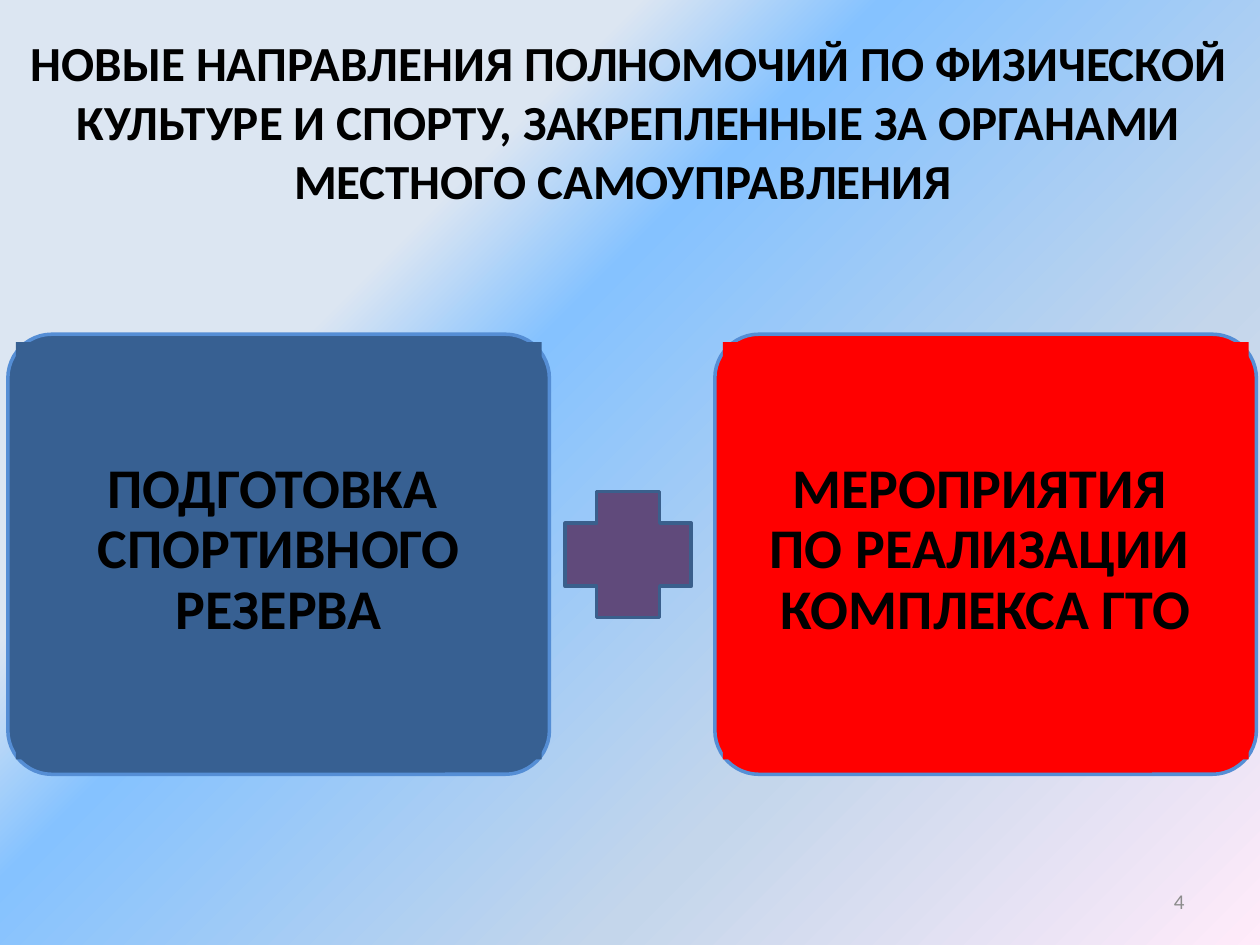
from dataclasses import dataclass

from lxml.etree import SubElement
from pptx import Presentation
from pptx.dml.color import RGBColor
from pptx.enum.shapes import MSO_SHAPE as Shape
from pptx.enum.text import MSO_ANCHOR as Anchor, MSO_AUTO_SIZE as AutoSize, PP_ALIGN as Align
from pptx.oxml.ns import qn
from pptx.util import Pt


@dataclass(frozen=True)
class Theme:
    font: str = "Calibri"
    title_size: int = 28
    card_size: int = 32
    number_size: int = 12
    text: str = "000000"
    number: str = "8C8C8C"
    blue: str = "376092"
    red: str = "FF0000"
    card_line: str = "558ED5"
    plus: str = "604A7B"
    plus_line: str = "3A5F8C"
    line_width: int = 2
    background: tuple = ((29, "DCE6F2"), (40, "85C2FF"), (70, "C4D6EB"), (100, "FFEBFA"))


def write_text(shape, lines, *, size, color, font, bold=False, align=Align.CENTER,
               anchor=Anchor.MIDDLE, spacing=None, inset=None):
    """Fill a shape with one paragraph per line."""
    frame = shape.text_frame
    frame.word_wrap = True
    frame.auto_size = AutoSize.NONE
    frame.vertical_anchor = anchor
    if inset is not None:
        frame.margin_left = frame.margin_right = Pt(inset)
        frame.margin_top = frame.margin_bottom = Pt(inset)
    frame.text = "\n".join(lines)
    for paragraph in frame.paragraphs:
        paragraph.alignment = align
        paragraph.line_spacing = spacing
        for run in paragraph.runs:
            run.font.name = font
            run.font.size = Pt(size)
            run.font.bold = bold
            run.font.color.rgb = RGBColor.from_string(color)


class SlideBuilder:
    def __init__(self, slide, theme):
        self.slide = slide
        self.theme = theme

    def background(self):
        fill = self.slide.background.fill
        fill.gradient()
        fill.gradient_angle = 315
        # Extra gradient stops need XML
        stops = fill.gradient_stops[0]._gs.getparent()
        for stop in list(stops):
            stops.remove(stop)
        for position, color in self.theme.background:
            stop = SubElement(stops, qn("a:gs"), pos=str(position * 1000))
            SubElement(stop, qn("a:srgbClr"), val=color)

    def title(self, text, left, top, width, height):
        title = self.slide.shapes.title
        title.left, title.top, title.width, title.height = map(Pt, (left, top, width, height))
        write_text(title, [text], size=self.theme.title_size, color=self.theme.text,
                   font=self.theme.font, bold=True, anchor=Anchor.TOP)

    def shape(self, kind, left, top, width, height, fill, line=None, parent=None):
        shapes = (parent or self.slide).shapes
        shape = shapes.add_shape(kind, *map(Pt, (left, top, width, height)))
        shape.shadow.inherit = False
        shape.fill.solid()
        shape.fill.fore_color.rgb = RGBColor.from_string(fill)
        if line:
            shape.line.color.rgb = RGBColor.from_string(line)
            shape.line.width = Pt(self.theme.line_width)
        else:
            shape.line.fill.background()
        return shape

    def card(self, lines, left, top, width, height, fill):
        group = self.slide.shapes.add_group_shape()
        frame = self.shape(Shape.ROUNDED_RECTANGLE, left, top, width, height, fill,
                           self.theme.card_line, group)
        frame.adjustments[0] = 0.1
        label = self.shape(Shape.RECTANGLE, left + 4.5, top + 4.5, width - 9, height - 13,
                           fill, parent=group)
        write_text(label, lines, size=self.theme.card_size, color=self.theme.text,
                   font=self.theme.font, bold=True, spacing=0.9, inset=1.5)

    def plus(self, left, top, size):
        self.shape(Shape.CROSS, left, top, size, size, self.theme.plus, self.theme.plus_line)

    def number(self, text, left, top, width, height):
        box = self.slide.shapes.add_textbox(*map(Pt, (left, top, width, height)))
        write_text(box, [text], size=self.theme.number_size, color=self.theme.number,
                   font=self.theme.font, align=Align.RIGHT)


def main():
    presentation = Presentation()
    presentation.slide_width, presentation.slide_height = Pt(720), Pt(540)
    theme = Theme()
    builder = SlideBuilder(presentation.slides.add_slide(presentation.slide_layouts[5]), theme)

    # Background and heading
    builder.background()
    builder.title("НОВЫЕ НАПРАВЛЕНИЯ ПОЛНОМОЧИЙ ПО ФИЗИЧЕСКОЙ КУЛЬТУРЕ И СПОРТУ, "
                  "ЗАКРЕПЛЕННЫЕ ЗА ОРГАНАМИ МЕСТНОГО САМОУПРАВЛЕНИЯ ", 0, 15, 718, 109.5)

    # Two new areas of responsibility, joined by a plus
    cards = (
        (4.5, theme.blue, ("ПОДГОТОВКА ", "СПОРТИВНОГО РЕЗЕРВА")),
        (408.5, theme.red, ("МЕРОПРИЯТИЯ ", "ПО РЕАЛИЗАЦИИ ", "КОМПЛЕКСА ГТО")),
    )
    for left, fill, lines in cards:
        builder.card(lines, left, 191, 309.5, 251.5, fill)
    builder.plus(323, 281, 72)

    # Slide number
    builder.number("4", 516, 500.5, 168, 28.5)

    presentation.save("out.pptx")


if __name__ == "__main__":
    main()
